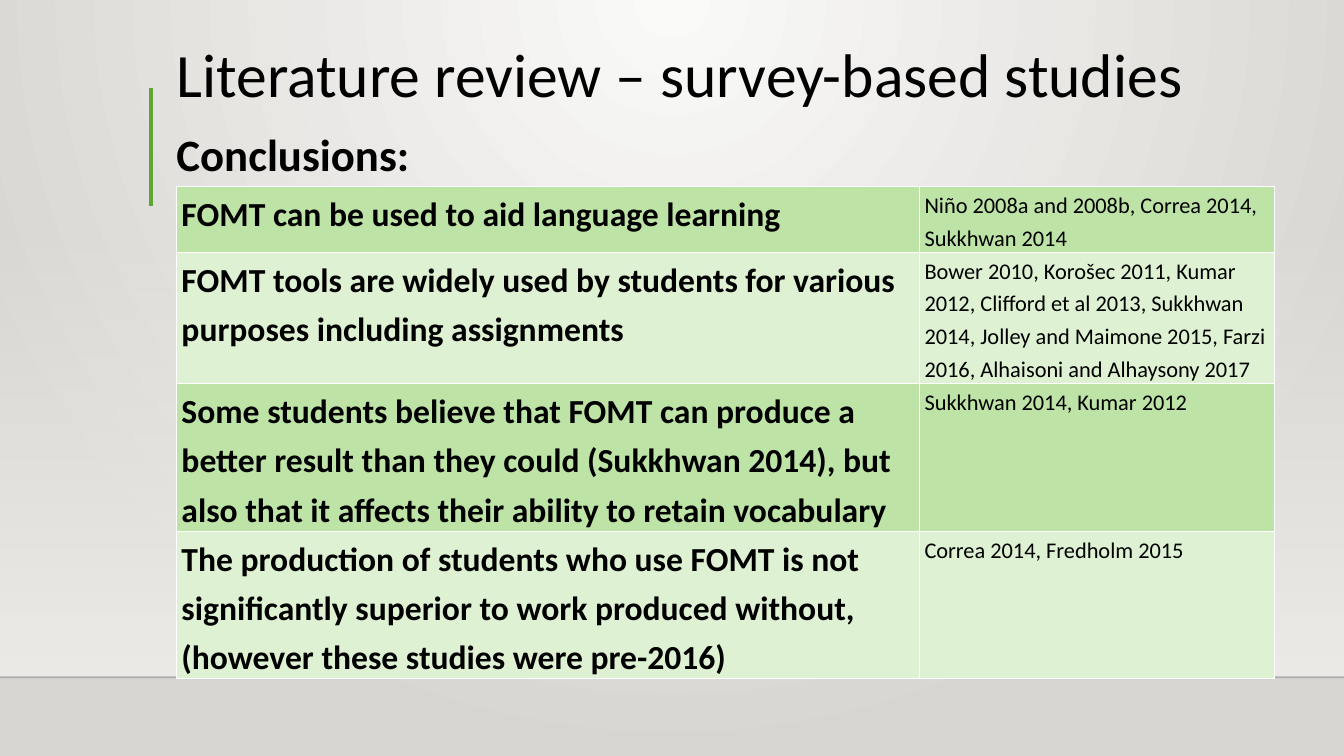
from lxml import etree
from pptx import Presentation
from pptx import util as u
from pptx.dml.color import RGBColor
from pptx.enum import shapes, text
from pptx.oxml import ns

WIDE, HIGH = 13.33, 7.5
LEFT, FACE = 1.65, "Calibri"
BANDS = ["BDE3A6", "DEF1D2"]
ROWS = [
    (0.65, "FOMT can be used to aid language learning",
     "Niño 2008a and 2008b, Correa 2014, Sukkhwan 2014"),
    (1.3, "FOMT tools are widely used by students for various purposes including assignments",
     "Bower 2010, Korošec 2011, Kumar 2012, Clifford et al 2013, Sukkhwan 2014, "
     "Jolley and Maimone 2015, Farzi 2016, Alhaisoni and Alhaysony 2017"),
    (1.46, "Some students believe that FOMT can produce a better result than they could "
     "(Sukkhwan 2014), but also that it affects their ability to retain vocabulary",
     "Sukkhwan 2014, Kumar 2012"),
    (1.46, "The production of students who use FOMT is not significantly superior to work "
     "produced without, (however these studies were pre-2016)",
     "Correa 2014, Fredholm 2015"),
]


def color(code):
    """Turn a hex string into a colour."""
    return RGBColor.from_string(code)


def sub(node, tag, **attrs):
    """Add a drawing element to a node."""
    part = etree.SubElement(node, ns.qn("a:" + tag))
    for key, val in attrs.items():
        part.set(key, str(val))
    return part


def fade(node, share):
    """Set the opacity of the colour inside a node, in percent."""
    sub(next(node.iter(ns.qn("a:srgbClr"))), "alpha", val=share * 1000)


def blend(fill, first, last):
    """Fill with a two-colour gradient running downwards."""
    fill.gradient()
    fill.gradient_angle = 270
    for stop, code, spot in zip(fill.gradient_stops, (first, last), (0, 1)):
        stop.color.rgb = color(code)
        stop.position = spot


def write(frame, words, size, bold=False, space=1.2):
    """Write one formatted paragraph in a frame."""
    frame.text = words
    para = frame.paragraphs[0]
    para.line_spacing = space
    para.space_before = u.Pt(0)
    para.alignment = text.PP_ALIGN.LEFT
    for run in para.runs:
        run.font.name, run.font.size, run.font.bold = FACE, u.Pt(size), bold
        run.font.color.rgb = color("000000")
    return para


def place(shape, *box):
    """Move a shape to a box given in inches."""
    shape.left, shape.top, shape.width, shape.height = map(u.Inches, box)


def rule(slide, start, end, code, width):
    """Draw a straight line between two points."""
    line = slide.shapes.add_connector(
        shapes.MSO_CONNECTOR.STRAIGHT, *map(u.Inches, start + end))
    line.line.color.rgb = color(code)
    line.line.width = u.Pt(width)
    sub(line.element.spPr, "effectLst")
    return line


def stage(slide):
    """Draw the backdrop with its wall, floor line and accent bar."""
    blend(slide.background.fill, "FAFAF9", "D7D5D2")
    lin = next(slide.element.iter(ns.qn("a:lin")))
    ring = sub(lin.getparent(), "path", path="circle")
    sub(ring, "fillToRect", l=43000, t=0, r=43000, b=100000)
    lin.getparent().replace(lin, ring)
    wall = slide.shapes.add_shape(
        shapes.MSO_SHAPE.RECTANGLE, *map(u.Inches, (0, 2.2, WIDE, 4.5)))
    wall.shadow.inherit = False
    wall.line.fill.background()
    blend(wall.fill, "EDEBE7", "EDEBE7")
    fade(wall.element.spPr, 0)
    floor = rule(slide, (0, 6.72), (WIDE, 6.72), "000001", 1)
    fade(floor.element.spPr, 20)
    bar = rule(slide, (1.5, 0.87), (1.5, 2.04), "5FA534", 3)
    for part in (wall, floor, bar):
        slide.shapes.title.element.addprevious(part.element)


def heads(slide):
    """Place the title and the lead line."""
    title, body = slide.shapes.title, slide.placeholders[1]
    place(title, LEFT, 0, 10.41, 1.15)
    place(body, LEFT, 1.1, 10.41, 5.11)
    write(title.text_frame, "Literature review – survey-based studies", 44, space=0.9)
    para = write(body.text_frame, "Conclusions:", 32, True)
    props = para._p.get_or_add_pPr()
    props.set("marL", "0")
    props.set("indent", "0")
    sub(props, "buNone")
    title.text_frame.vertical_anchor = text.MSO_ANCHOR.BOTTOM
    body.text_frame.vertical_anchor = text.MSO_ANCHOR.TOP
    for shape in (title, body):
        shape.text_frame.auto_size = text.MSO_AUTO_SIZE.NONE


def style(cell, code):
    """Give a cell white borders, a fill and tight margins."""
    props = cell._tc.get_or_add_tcPr()
    for side in "LRTB":
        edge = sub(props, "ln" + side, w=u.Pt(1))
        sub(sub(edge, "solidFill"), "srgbClr", val="FFFFFF")
    cell.fill.solid()
    cell.fill.fore_color.rgb = color(code)
    cell.margin_left = cell.margin_right = u.Inches(0.05)
    cell.margin_top = cell.margin_bottom = 0


def grid(slide, left, top, cols):
    """Build the table of conclusions and their sources."""
    high = sum(row[0] for row in ROWS)
    table = slide.shapes.add_table(
        len(ROWS), len(cols), *map(u.Inches, (left, top, sum(cols), high))).table
    table.first_row = table.horz_banding = False
    for col, width in zip(table.columns, cols):
        col.width = u.Inches(width)
    for i, (tall, *words) in enumerate(ROWS):
        table.rows[i].height = u.Inches(tall)
        for j, (size, bold) in enumerate([(24, True), (16, False)]):
            cell = table.cell(i, j)
            style(cell, BANDS[i % 2])
            write(cell.text_frame, words[j], size, bold)


def main():
    """Build and save the slide."""
    deck = Presentation()
    deck.slide_width, deck.slide_height = u.Inches(WIDE), u.Inches(HIGH)
    slide = deck.slides.add_slide(deck.slide_layouts[1])
    stage(slide)
    heads(slide)
    grid(slide, LEFT + 0.1, 1.85, (7.37, 3.52))
    deck.save("out.pptx")


if __name__ == "__main__":
    main()
